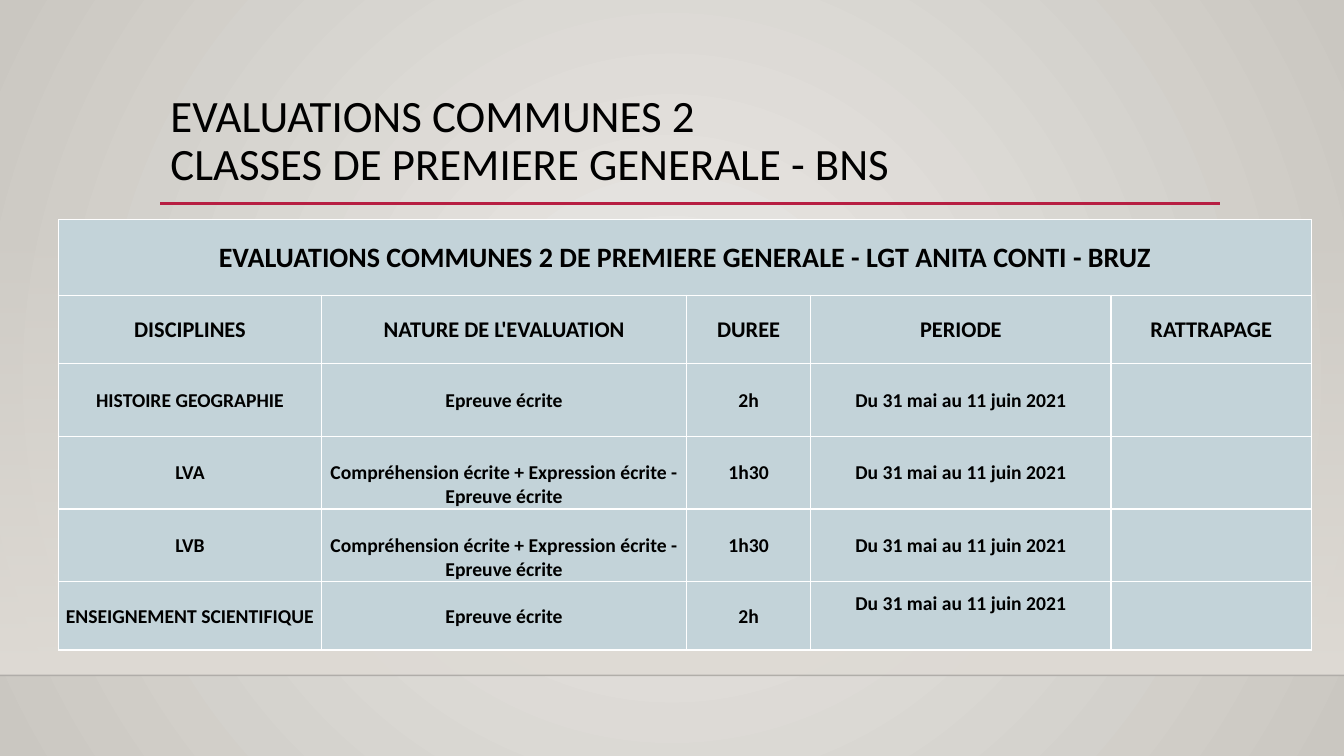
"""Build the slide listing the second common assessments for the première générale classes."""
from lxml.etree import SubElement
from pptx import Presentation
from pptx.dml.color import RGBColor
from pptx.enum.shapes import MSO_CONNECTOR, MSO_SHAPE
from pptx.enum.text import MSO_ANCHOR, PP_ALIGN
from pptx.oxml import parse_xml
from pptx.oxml.ns import nsdecls, qn
from pptx.util import Inches, Pt

COLORS = {"centre": "ECEAE7", "edge": "CAC7C1", "wall": "DFDBD5", "floor": "000001",
          "accent": "B71E42", "cell": "C3D3D9", "border": "FFFFFF", "text": "000000"}
W, H = 13.33, 7.5
FLOOR = 6.7


def write(tf, text, size, bold=False, align=PP_ALIGN.LEFT, spacing=1.0):
    p = tf.paragraphs[0]
    p.text = text
    p.alignment, p.line_spacing = align, spacing
    for r in p.runs:
        r.font.name, r.font.size, r.font.bold = "Calibri", Pt(size), bold
        r.font.color.rgb = RGBColor.from_string(COLORS["text"])


def set_gradient(fill, root, colors, direction):
    fill.gradient()
    for stop, color in zip(fill.gradient_stops, colors):
        stop.color.rgb = RGBColor.from_string(COLORS[color])
    grad = next(root.iter(qn("a:gradFill")))
    grad.replace(grad.find(qn("a:lin")), parse_xml(direction))
    return grad


prs = Presentation()
prs.slide_width, prs.slide_height = Inches(W), Inches(H)
s = prs.slides.add_slide(prs.slide_layouts[5])
set_gradient(s.background.fill, s.element, ("centre", "edge"),
             f'<a:path {nsdecls("a")} path="circle">'
             '<a:fillToRect l="50000" t="50000" r="50000" b="50000"/></a:path>')

wall = s.shapes.add_shape(MSO_SHAPE.RECTANGLE, 0, Inches(2.21), Inches(W), Inches(FLOOR - 2.21))
wall.shadow.inherit = False
wall.line.fill.background()
grad = set_gradient(wall.fill, wall.element, ("wall", "wall"),
                    f'<a:lin {nsdecls("a")} ang="5400000" scaled="0"/>')
SubElement(next(grad.iter(qn("a:srgbClr"))), qn("a:alpha"), val="0")

for x1, x2, y, color, width, opacity in ((0, W, FLOOR, "floor", 1, 20),
                                         (1.59, 12.1, 2.02, "accent", 2.5, 100)):
    line = s.shapes.add_connector(MSO_CONNECTOR.STRAIGHT, Inches(x1), Inches(y), Inches(x2), Inches(y))
    line.line.color.rgb = RGBColor.from_string(COLORS[color])
    line.line.width = Pt(width)
    SubElement(next(line.element.iter(qn("a:srgbClr"))), qn("a:alpha"), val=str(opacity * 1000))
    SubElement(line.element.spPr, qn("a:effectLst"))

title = s.shapes.title
title.left, title.top, title.width, title.height = map(Inches, (1.59, 0.88, 10.5, 1.15))
tf = title.text_frame
tf.word_wrap = True
tf.vertical_anchor = MSO_ANCHOR.TOP
write(tf, "EVALUATIONS COMMUNES 2\vCLASSES DE PREMIERE GENERALE - BNS", 32, spacing=0.9)

PERIOD = "Du 31 mai au 11 juin 2021"
WRITTEN = "Epreuve écrite"
LANGUAGE = "Compréhension écrite + Expression écrite - Epreuve écrite"
rows = [
    ("EVALUATIONS COMMUNES 2 DE PREMIERE GENERALE - LGT ANITA CONTI - BRUZ", "", "", "", ""),
    ("DISCIPLINES", "NATURE DE L'EVALUATION", "DUREE", "PERIODE", "RATTRAPAGE"),
    ("HISTOIRE GEOGRAPHIE", WRITTEN, "2h", PERIOD, ""),
    ("LVA", LANGUAGE, "1h30", PERIOD, ""),
    ("LVB", LANGUAGE, "1h30", PERIOD, ""),
    ("ENSEIGNEMENT SCIENTIFIQUE", WRITTEN, "2h", PERIOD, ""),
]
col_widths = (2.61, 3.62, 1.23, 2.98, 1.99)
row_heights = (0.75, 0.68, 0.72, 0.72, 0.72, 0.68)
sizes = (20, 16, 14, 14, 14, 14)

table = s.shapes.add_table(len(rows), len(col_widths), Inches(0.58), Inches(2.18),
                           Inches(sum(col_widths)), Inches(sum(row_heights))).table
table.first_row = table.horz_banding = False
for column, width in zip(table.columns, col_widths):
    column.width = Inches(width)
for row, height in zip(table.rows, row_heights):
    row.height = Inches(height)

for i, values in enumerate(rows):
    for j, value in enumerate(values):
        cell = table.cell(i, j)
        cell.margin_left = cell.margin_right = cell.margin_top = Inches(0.01)
        cell.margin_bottom = 0
        cell.vertical_anchor = MSO_ANCHOR.BOTTOM if value == LANGUAGE else MSO_ANCHOR.MIDDLE
        tcPr = cell._tc.get_or_add_tcPr()
        for side in ("lnL", "lnR", "lnT", "lnB"):
            tcPr.append(parse_xml(f'<a:{side} {nsdecls("a")} w="12700"><a:solidFill>'
                                  f'<a:srgbClr val="{COLORS["border"]}"/></a:solidFill></a:{side}>'))
        cell.fill.solid()
        cell.fill.fore_color.rgb = RGBColor.from_string(COLORS["cell"])
        if value:
            write(cell.text_frame, value, sizes[i], bold=True, align=PP_ALIGN.CENTER)
table.cell(0, 0).merge(table.cell(0, len(col_widths) - 1))
table.cell(len(rows) - 1, 3).margin_bottom = Inches(0.24)

prs.save("out.pptx")
